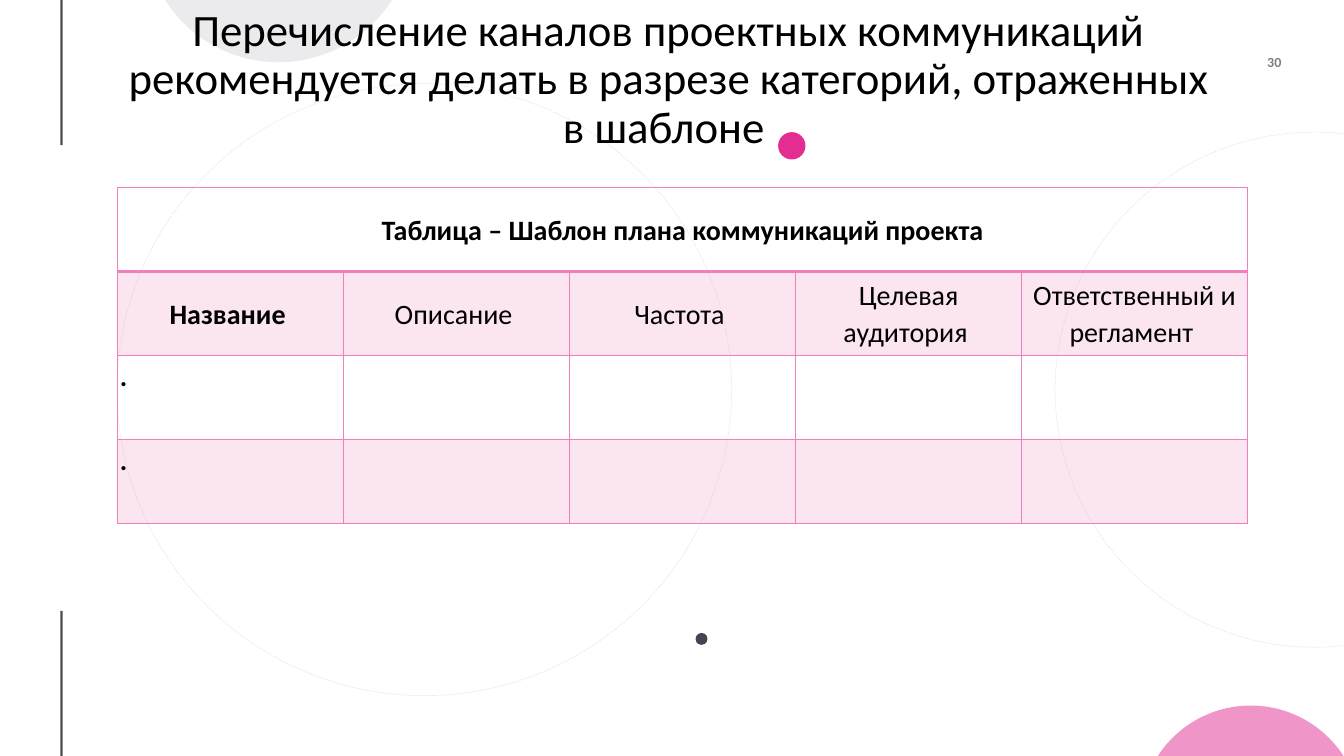
"""Builds the slide with the communication plan template table."""
from math import acos, cos, sin
from lxml import etree
from pptx import Presentation
from pptx.dml.color import RGBColor
from pptx.enum.dml import MSO_LINE
from pptx.enum.shapes import MSO_CONNECTOR, MSO_SHAPE
from pptx.enum.text import MSO_ANCHOR, MSO_AUTO_SIZE, PP_ALIGN
from pptx.oxml.ns import qn
from pptx.util import Cm, Pt

OVAL = MSO_SHAPE.OVAL
LINE = MSO_CONNECTOR.STRAIGHT
DOTS = MSO_LINE.ROUND_DOT
MIDDLE = MSO_ANCHOR.MIDDLE
CENTER, RIGHT = PP_ALIGN.CENTER, PP_ALIGN.RIGHT
FIXED = MSO_AUTO_SIZE.NONE
FONT = "Calibri"
HUES = {"black": "000000", "pink": "E32D91", "rose": "EE81BD",
        "slate": "454551", "grey": "D8D9DC"}


def paint(fill, node, hue, alpha=100):
    """Fill with a colour; node is the XML that holds the fill."""
    fill.solid()
    fill.fore_color.rgb = RGBColor.from_string(HUES[hue])
    if alpha < 100:
        color = node.findall(".//" + qn("a:srgbClr"))[-1]
        etree.SubElement(color, qn("a:alpha"), val=str(alpha * 1000))


def style(run, size, bold=False, alpha=100):
    """Set the font of a run."""
    run.font.name = FONT
    run.font.size = Pt(size)
    run.font.bold = bold
    paint(run.font.fill, run._r, "black", alpha)


deck = Presentation()
deck.slide_width, deck.slide_height = Cm(33.87), Cm(19.05)
slide = deck.slides.add_slide(deck.slide_layouts[5])
shapes = slide.shapes

for top, end in ((15.39, 19.05), (0, 3.66)):
    rule = shapes.add_connector(LINE, Cm(1.55), Cm(top), Cm(1.55), Cm(end))
    rule.line.width = Pt(1.5)
    paint(rule.line.fill, rule._element, "black", 70)
    etree.SubElement(rule._element.spPr, qn("a:effectLst"))

page = shapes.add_textbox(Cm(30.33), Cm(1.22), Cm(1.96), Cm(0.69))
frame = page.text_frame
frame.text = "30"
frame.word_wrap = True
frame.vertical_anchor = MIDDLE
frame.margin_left = frame.margin_right = 0
frame.margin_top = frame.margin_bottom = 0
para = frame.paragraphs[0]
para.alignment = RIGHT
style(para.runs[0], 10, True, 50)

for left, top, width, height in ((26.59, 3.33, 13.06, 12.98), (2.95, 2.11, 15.49, 15.42)):
    ring = shapes.add_shape(OVAL, Cm(left), Cm(top), Cm(width), Cm(height))
    ring.shadow.inherit = False
    ring.fill.background()
    ring.line.width = Pt(0.5)
    paint(ring.line.fill, ring._element, "black", 10)
    ring.line.dash_style = DOTS

for left, top, size, hue in ((17.53, 15.95, 0.3, "slate"), (19.61, 3.33, 0.69, "pink")):
    dot = shapes.add_shape(OVAL, Cm(left), Cm(top), Cm(size), Cm(size))
    dot.shadow.inherit = False
    dot.line.fill.background()
    paint(dot.fill, dot._element, hue)

STEPS = 48
for mid, edge, half, rise, sign, hue in ((31.52, 19.05, 2.34, 1.27, -1, "pink"),
                                         (7.02, 0, 2.86, 1.57, 1, "grey")):
    radius = (half ** 2 + rise ** 2) / (2 * rise)
    reach = acos((radius - rise) / radius)
    turns = [reach * (2 * i / STEPS - 1) for i in range(STEPS + 1)]
    points = [(Cm(mid + radius * sin(turn)),
               Cm(edge + sign * (radius * cos(turn) - radius + rise))) for turn in turns]
    path = shapes.build_freeform(*points[0])
    path.add_line_segments(points[1:])
    cap = path.convert_to_shape()
    cap.shadow.inherit = False
    cap.line.fill.background()
    paint(cap.fill, cap._element, hue, 50)

title = shapes.title
shapes._spTree.append(title._element)
title.left, title.top, title.width, title.height = Cm(2.62), Cm(1.04), Cm(28.47), Cm(1.96)
frame = title.text_frame
frame.text = ("Перечисление каналов проектных коммуникаций рекомендуется "
              "делать в разрезе категорий, отраженных в шаблоне ")
frame.auto_size = FIXED
frame.vertical_anchor = MIDDLE
para = frame.paragraphs[0]
para.alignment = CENTER
para.line_spacing = 0.9
style(para.runs[0], 32)

ROWS = (("Таблица – Шаблон плана коммуникаций проекта", "", "", "", ""),
        ("Название ", "Описание ", "Частота ", "Целевая аудитория ",
         "Ответственный и регламент "),
        (".", "", "", "", ""),
        (".", "", "", "", ""))
table = shapes.add_table(4, 5, Cm(2.97), Cm(4.72), Cm(28.47), Cm(8.48)).table
table.first_row = table.horz_banding = False
table.cell(0, 0).merge(table.cell(0, 4))
for r, row in enumerate(ROWS):
    for c, text in enumerate(row):
        cell = table.cell(r, c)
        cell.margin_left = cell.margin_right = Cm(0.05)
        cell.margin_top = cell.margin_bottom = Cm(0.05)
        if r % 2:
            paint(cell.fill, cell._tc, "rose", 20)
        else:
            cell.fill.background()
        props = cell._tc.get_or_add_tcPr()
        for i, side in enumerate(("lnL", "lnR", "lnT", "lnB")):
            thick = (r, side) == (0, "lnB")
            edge = etree.Element(qn("a:" + side), w=str(Pt(2 if thick else 1)))
            solid = etree.SubElement(edge, qn("a:solidFill"))
            etree.SubElement(solid, qn("a:srgbClr"), val=HUES["rose"])
            props.insert(i, edge)
        if text:
            cell.text_frame.text = text
            para = cell.text_frame.paragraphs[0]
            para.line_spacing = 1.07
            style(para.runs[0], 20, c == 0)
            if r < 2:
                cell.vertical_anchor = MIDDLE
                para.alignment = CENTER

deck.save("out.pptx")
